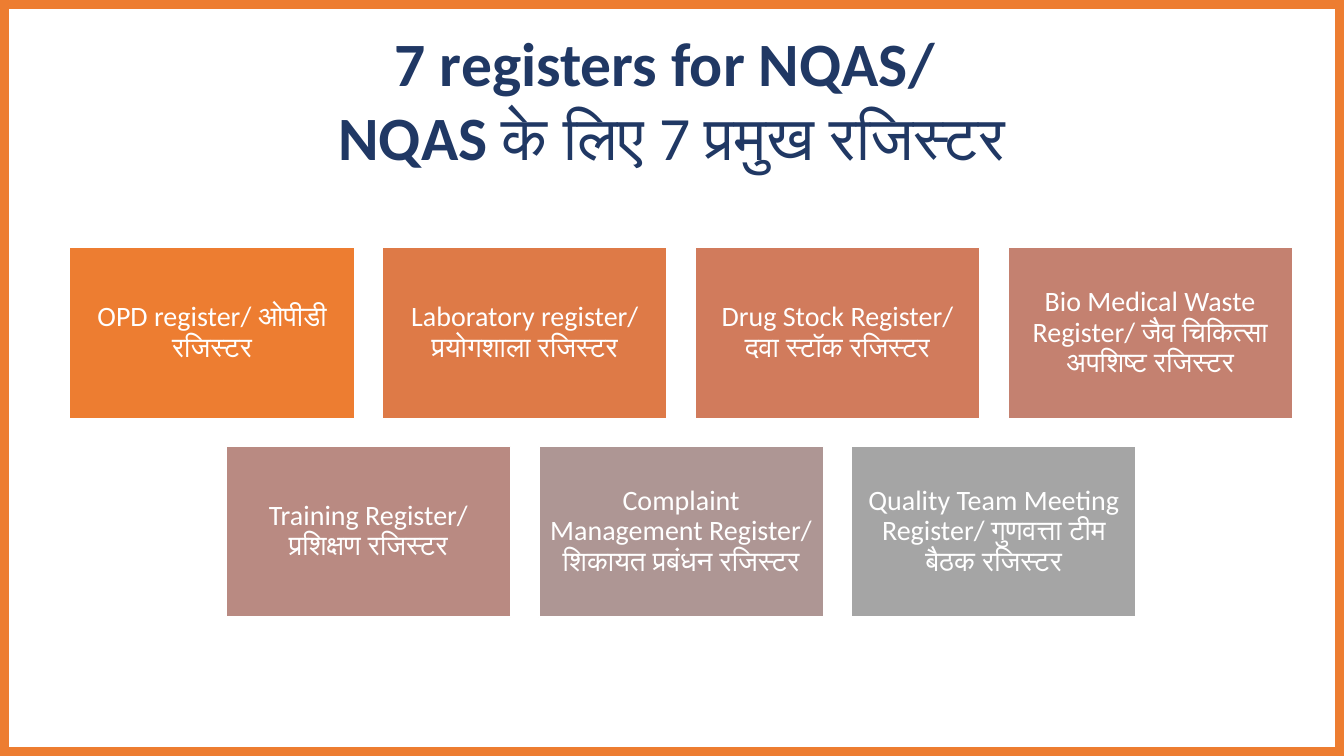
from pptx import Presentation
from pptx.dml.color import RGBColor
from pptx.enum.shapes import MSO_SHAPE as Preset
from pptx.enum.text import MSO_ANCHOR as Anchor, MSO_AUTO_SIZE as AutoSize, PP_ALIGN as Align
from pptx.util import Cm, Pt

ORANGE = RGBColor(0xED, 0x7D, 0x31)
NAVY = RGBColor(0x20, 0x38, 0x64)
WHITE = RGBColor(0xFF, 0xFF, 0xFF)
SLIDE_W, SLIDE_H = 33.87, 19.05
BORDER = 0.2
CARD_W, CARD_H, GAP = 7.17, 4.3, 0.71
GRID_LEFT, GRID_TOP, COLUMNS = 1.76, 6.24, 4

REGISTERS = [
    ("OPD register/ ओपीडी रजिस्टर", ORANGE),
    ("Laboratory register/ प्रयोगशाला रजिस्टर", RGBColor(0xDE, 0x7A, 0x47)),
    ("Drug Stock Register/ दवा स्टॉक रजिस्टर", RGBColor(0xD1, 0x7B, 0x5C)),
    ("Bio Medical Waste Register/ जैव चिकित्सा अपशिष्ट रजिस्टर", RGBColor(0xC4, 0x81, 0x70)),
    ("Training Register/ प्रशिक्षण रजिस्टर", RGBColor(0xB9, 0x8A, 0x82)),
    ("Complaint Management Register/ शिकायत प्रबंधन रजिस्टर", RGBColor(0xAE, 0x96, 0x94)),
    ("Quality Team Meeting Register/ गुणवत्ता टीम बैठक रजिस्टर", RGBColor(0xA5, 0xA5, 0xA5)),
]


class RegisterSlide:
    font_name = "Calibri"

    def __init__(self, slide):
        self.shapes = slide.shapes

    def paint(self, shape, fill, line):
        shape.shadow.inherit = False
        shape.fill.solid()
        shape.fill.fore_color.rgb = fill
        shape.line.color.rgb = line
        shape.line.width = Pt(1)

    def run(self, paragraph, text, size, color, bold=False):
        run = paragraph.add_run()
        run.text = text
        run.font.name = self.font_name
        run.font.size = Pt(size)
        run.font.color.rgb = color
        run.font.bold = bold

    def border(self, thickness):
        near, right, bottom = Cm(thickness), Cm(SLIDE_W - thickness), Cm(SLIDE_H - thickness)
        width, height = Cm(SLIDE_W), Cm(SLIDE_H)
        outline = self.shapes.build_freeform(0, 0)
        outline.add_line_segments([(width, 0), (width, height), (0, height)])
        outline.move_to(near, near)
        outline.add_line_segments([(near, bottom), (right, bottom), (right, near)])
        self.paint(outline.convert_to_shape(), ORANGE, ORANGE)

    def title(self, lines):
        heading = self.shapes.add_textbox(Cm(1.02), Cm(0.5), Cm(31.83), Cm(4.02)).text_frame
        heading.word_wrap = True
        heading.auto_size = AutoSize.SHAPE_TO_FIT_TEXT
        for index, line in enumerate(lines):
            paragraph = heading.add_paragraph() if index else heading.paragraphs[0]
            paragraph.alignment = Align.CENTER
            for text, bold in line:
                self.run(paragraph, text, 44, NAVY, bold)

    def card(self, left, top, label, color):
        card = self.shapes.add_shape(Preset.RECTANGLE, Cm(left), Cm(top), Cm(CARD_W), Cm(CARD_H))
        self.paint(card, color, WHITE)
        frame = card.text_frame
        frame.word_wrap = True
        frame.vertical_anchor = Anchor.MIDDLE
        frame.margin_left = frame.margin_right = Cm(0.21)
        frame.margin_top = frame.margin_bottom = Cm(0.21)
        paragraph = frame.paragraphs[0]
        paragraph.alignment = Align.CENTER
        paragraph.line_spacing = 0.9
        self.run(paragraph, label, 20, WHITE)


def main():
    deck = Presentation()
    deck.slide_width, deck.slide_height = Cm(SLIDE_W), Cm(SLIDE_H)
    page = RegisterSlide(deck.slides.add_slide(deck.slide_layouts[6]))
    page.border(BORDER)
    page.title([
        [("7 registers for NQAS/ ", True)],
        [("NQAS ", True), ("के लिए 7 प्रमुख रजिस्टर", False)],
    ])
    for index, (label, color) in enumerate(REGISTERS):
        row, column = divmod(index, COLUMNS)
        left = GRID_LEFT + (column + row / 2) * (CARD_W + GAP)
        page.card(left, GRID_TOP + row * (CARD_H + GAP), label, color)
    deck.save("out.pptx")


if __name__ == "__main__":
    main()
